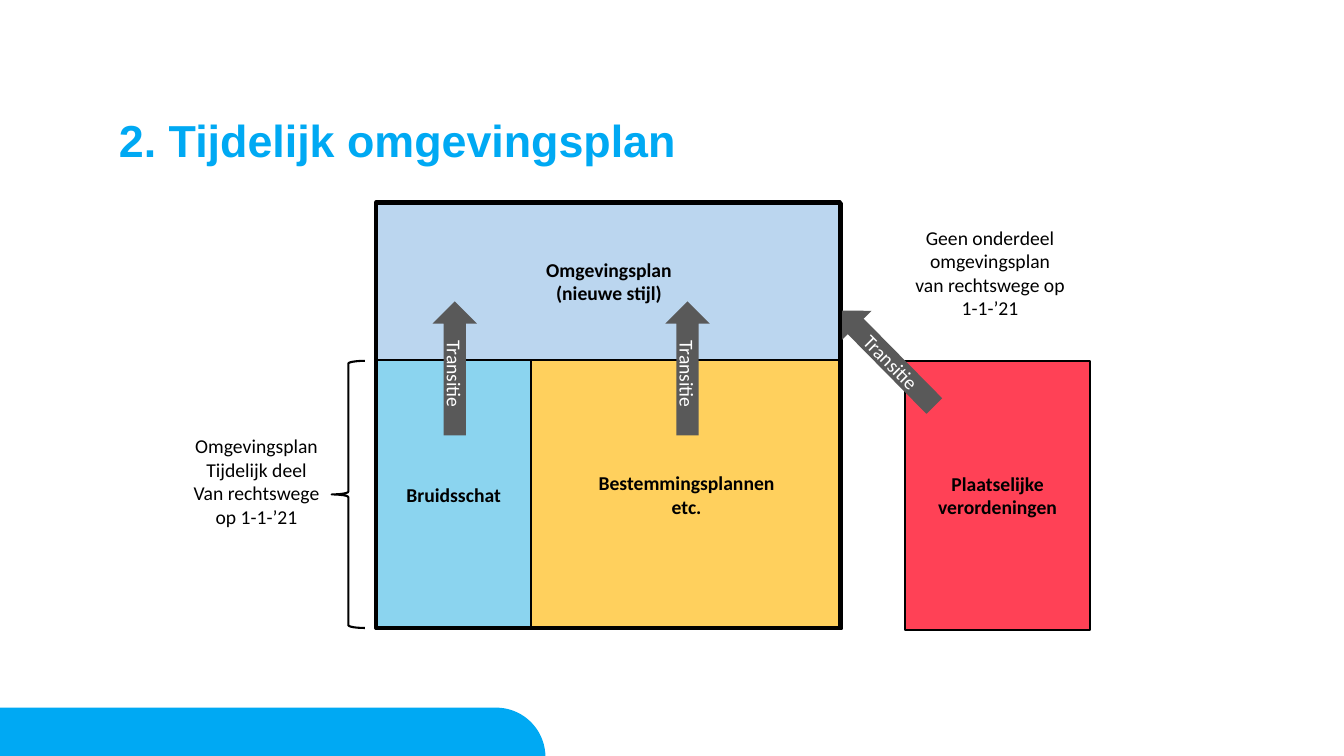
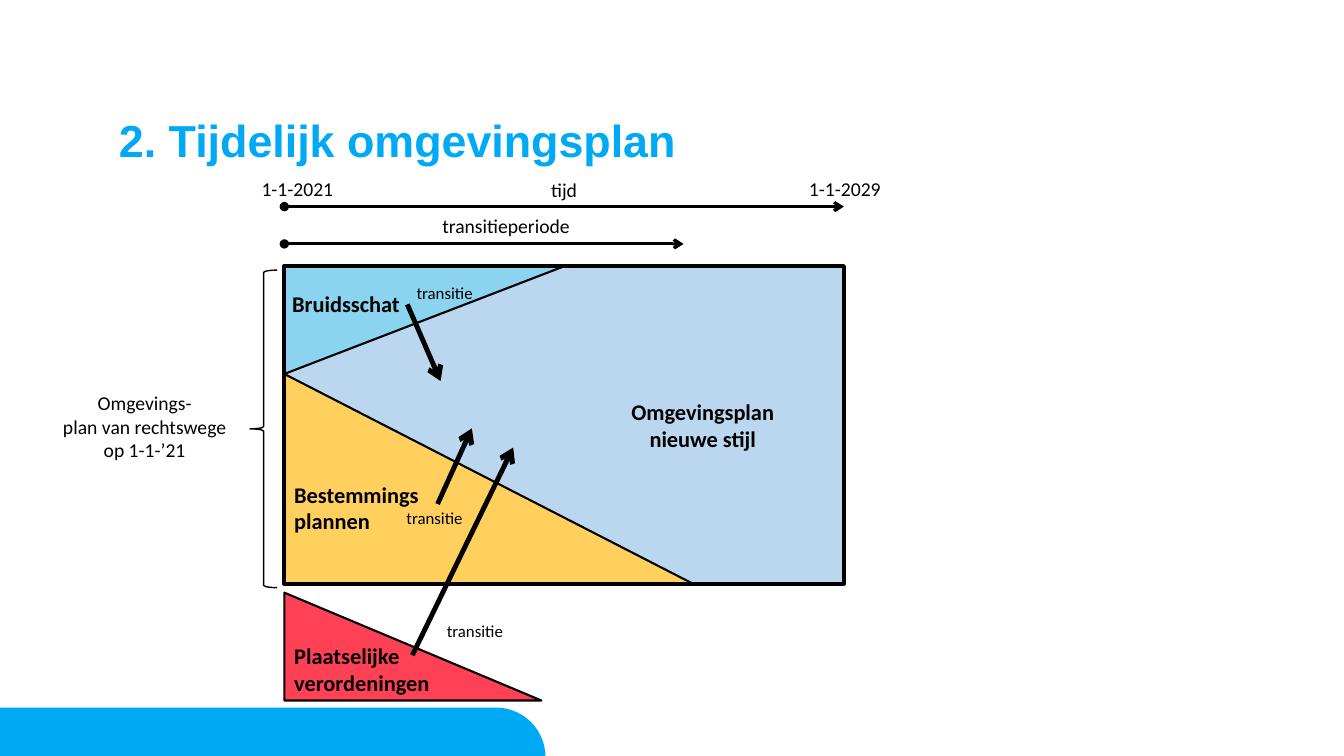
import math

import lxml.etree
import pptx
import pptx.dml.color
import pptx.enum.shapes
import pptx.enum.text
import pptx.oxml.ns
import pptx.util

Inches = pptx.util.Inches
Pt = pptx.util.Pt
RGBColor = pptx.dml.color.RGBColor
Shape = pptx.enum.shapes.MSO_SHAPE
Align = pptx.enum.text.PP_ALIGN
Anchor = pptx.enum.text.MSO_ANCHOR
qn = pptx.oxml.ns.qn

BRAND = RGBColor(0x00, 0xA9, 0xF3)
BLACK = RGBColor(0x00, 0x00, 0x00)
WHITE = RGBColor(0xFF, 0xFF, 0xFF)
GREY = RGBColor(0x59, 0x59, 0x59)
PALE = RGBColor(0xBB, 0xD6, 0xEF)
CYAN = RGBColor(0x8B, 0xD4, 0xEF)
YELLOW = RGBColor(0xFF, 0xD0, 0x5D)
RED = RGBColor(0xFF, 0x41, 0x56)


class Deck:
    """Holds the shared style and the slide being built."""

    def __init__(self):
        self.prs = pptx.Presentation()
        self.prs.slide_width = Inches(13.33)
        self.prs.slide_height = Inches(7.5)
        self.shapes = None

    def start(self, title):
        """Adds a slide with the footer band and its title."""
        slide = self.prs.slides.add_slide(self.prs.slide_layouts[5])
        self.shapes = slide.shapes
        self.footer()
        heading = self.shapes.title
        heading.left, heading.top = Inches(1.18), Inches(1.18)
        heading.width, heading.height = Inches(10.97), Inches(0.79)
        heading.text_frame.auto_size = pptx.enum.text.MSO_AUTO_SIZE.NONE
        self.fill_text(heading.text_frame, title, 32, True, BRAND, Align.LEFT,
                       Anchor.TOP, font="Arial", inset=0, spacing=0.9)

    def footer(self):
        """Draws the band with its rounded upper right corner."""
        right, top, bottom, radius = 5.41, 7.02, 7.5, 0.49
        angles = [math.radians(step * 5) for step in range(19)]
        arc = [(Inches(right - radius + radius * math.sin(a)),
                Inches(top + radius - radius * math.cos(a))) for a in angles]
        outline = self.shapes.build_freeform(0, Inches(bottom))
        outline.add_line_segments([(0, Inches(top))] + arc)
        self.paint(outline.convert_to_shape(), BRAND, 0)

    def paint(self, shape, fill, weight):
        """Sets fill and outline; None or 0 leaves them out."""
        shape.shadow.inherit = False
        if fill is None:
            shape.fill.background()
        else:
            shape.fill.solid()
            shape.fill.fore_color.rgb = fill
        if weight:
            shape.line.color.rgb = BLACK
            shape.line.width = Pt(weight)
        else:
            shape.line.fill.background()

    def fill_text(self, frame, text, size, bold, color, align, anchor,
                  font="Calibri", inset=None, spacing=None):
        """Sets text: a newline starts a paragraph, a vertical tab a line."""
        frame.word_wrap = True
        frame.vertical_anchor = anchor
        if inset is not None:
            frame.margin_left = frame.margin_right = Inches(inset)
            frame.margin_top = frame.margin_bottom = Inches(inset)
        for number, content in enumerate(text.split("\n")):
            paragraph = frame.add_paragraph() if number else frame.paragraphs[0]
            paragraph.alignment = align
            if spacing:
                paragraph.line_spacing = spacing
            for index, line in enumerate(content.split("\v")):
                if index:
                    paragraph.add_line_break()
                run = paragraph.add_run()
                run.text = line
                run.font.name = font
                run.font.size = Pt(size)
                run.font.bold = bold
                run.font.color.rgb = color

    def shape(self, kind, box, fill=None, weight=1.5, text="", size=14, turn=0):
        """Adds a shape whose box is the area it covers after a quarter turn."""
        left, top, width, height = box
        if turn % 180 == 90:
            left, top = left + (width - height) / 2, top + (height - width) / 2
            width, height = height, width
        shape = self.shapes.add_shape(kind, Inches(left), Inches(top),
                                      Inches(width), Inches(height))
        shape.rotation = turn
        self.paint(shape, fill, weight)
        if text:
            self.fill_text(shape.text_frame, text, size, True, BLACK,
                           Align.CENTER, Anchor.MIDDLE)
        return shape

    def transition(self, left, top, turn=0):
        """Adds a grey block arrow with its label running downwards."""
        arrow = self.shape(Shape.UP_ARROW, (left, top, 0.44, 1.33), GREY, 0,
                           turn=turn)
        self.fill_text(arrow.text_frame, "Transitie", 14, False, WHITE,
                       Align.CENTER, Anchor.MIDDLE, inset=0)
        body = arrow._element.txBody.find(qn("a:bodyPr"))
        body.set("vert", "vert")

    def label(self, box, text, size=14, bold=False, align=Align.CENTER):
        """Adds a text box."""
        frame = self.shapes.add_textbox(*map(Inches, box)).text_frame
        self.fill_text(frame, text, size, bold, BLACK, align, Anchor.TOP)

    def arrow(self, start, end, weight, head=None):
        """Adds a line with an arrow at its end."""
        line = self.shapes.add_connector(
            pptx.enum.shapes.MSO_CONNECTOR.STRAIGHT,
            *map(Inches, start + end))
        line.line.color.rgb = BLACK
        line.line.width = Pt(weight)
        properties = line._element.spPr
        outline = properties.find(qn("a:ln"))
        if head:
            lxml.etree.SubElement(outline, qn("a:headEnd")).set("type", head)
        lxml.etree.SubElement(outline, qn("a:tailEnd")).set("type", "arrow")
        lxml.etree.SubElement(properties, qn("a:effectLst"))


def build_parts(deck):
    """Shows which parts make up the plan."""
    deck.start("2. Tijdelijk omgevingsplan")
    left, top, middle, depth = 3.73, 2.01, 3.57, 2.67
    deck.shape(Shape.RECTANGLE, (left, top, 4.62, middle - top), PALE,
               text="Omgevingsplan\n(nieuwe stijl)")
    for x, y, width, fill, name in (
            (left, middle, 1.54, CYAN, "Bruidsschat"),
            (left + 1.54, middle, 3.08, YELLOW, "Bestemmingsplannen\vetc."),
            (8.98, 3.58, 1.83, RED, "Plaatselijke verordeningen")):
        deck.shape(Shape.RECTANGLE, (x, y, width, depth), fill, text=name)
    deck.shape(Shape.LEFT_BRACE, (3.29, 3.58, 0.33, 2.65))
    deck.label((8.98, 2.19, 1.68, 0.96),
               "Geen onderdeel omgevingsplan van rechtswege op 1-1-’21")
    deck.label((1.78, 4.26, 1.53, 1.04),
               "Omgevingsplan\vTijdelijk deel\vVan rechtswege op 1-1-’21")
    for x, y, turn in ((4.29, 2.99, 0), (6.6, 2.99, 0), (8.58, 2.89, 315.4)):
        deck.transition(x, y, turn)
    deck.shape(Shape.RECTANGLE, (left, top, 4.6, 4.22), weight=3)


def build_timeline(deck):
    """Shows how the parts move into the new plan over time."""
    deck.start("2. Tijdelijk omgevingsplan")
    left, top, width, height = 2.82, 2.64, 5.55, 3.15
    half, upper = 2.78, 1.07
    lower = height - upper
    deck.shape(Shape.RIGHT_TRIANGLE, (left, 5.88, 2.55, upper), RED)
    deck.shape(Shape.RECTANGLE, (left + 2.76, top, half, height), PALE, 0,
               "Omgevingsplan\nnieuwe stijl", 16)
    wedge = deck.shape(Shape.ISOSCELES_TRIANGLE, (left, top, half, height),
                       PALE, 0, turn=270)
    wedge.adjustments[0] = lower / height
    deck.shape(Shape.RIGHT_TRIANGLE, (left, top + upper, 4.05, lower), YELLOW)
    deck.shape(Shape.RIGHT_TRIANGLE, (left, top, half, upper), CYAN, turn=90)

    for y, end in ((2.05, left + width), (2.42, 6.78)):
        deck.arrow((left, y), (end, y), 2.25, "oval")
    for box, text in (
            ((4.96, 1.72, 1.27, 0.34), "tijd"),
            ((2.45, 1.71, 1, 0.34), "1-1-2021"),
            ((7.91, 1.71, 0.94, 0.34), "1-1-2029"),
            ((4.15, 2.07, 1.74, 0.34), "transitieperiode"),
            ((0.45, 3.83, 1.97, 0.81),
             "Omgevings-\vplan van rechtswege op 1-1-’21")):
        deck.label(box, text)
    for box, text in (
            ((left, 6.32, 1.63, 0.64), "Plaatselijke verordeningen"),
            ((left, 4.72, 1.46, 0.64), "Bestemmings\vplannen"),
            ((2.8, 2.83, 1.3, 0.37), "Bruidsschat")):
        deck.label(box, text, 16, True, Align.LEFT)
    for start, end, x, y in (
            ((4.09, 6.5), (5.09, 4.44), 4.27, 6.11),
            ((4.34, 5), (4.68, 4.25), 3.87, 4.99),
            ((4.04, 3.02), (4.37, 3.78), 3.97, 2.76)):
        deck.arrow(start, end, 3.5)
        deck.label((x, y, 0.88, 0.3), "transitie", 12)
    deck.shape(Shape.LEFT_BRACE, (2.48, 2.68, 0.27, height), weight=1)
    deck.shape(Shape.RECTANGLE, (left, top, width, height), weight=3)


def main():
    """Builds and saves the slides."""
    deck = Deck()
    build_parts(deck)
    build_timeline(deck)
    deck.prs.save("out.pptx")


if __name__ == "__main__":
    main()
